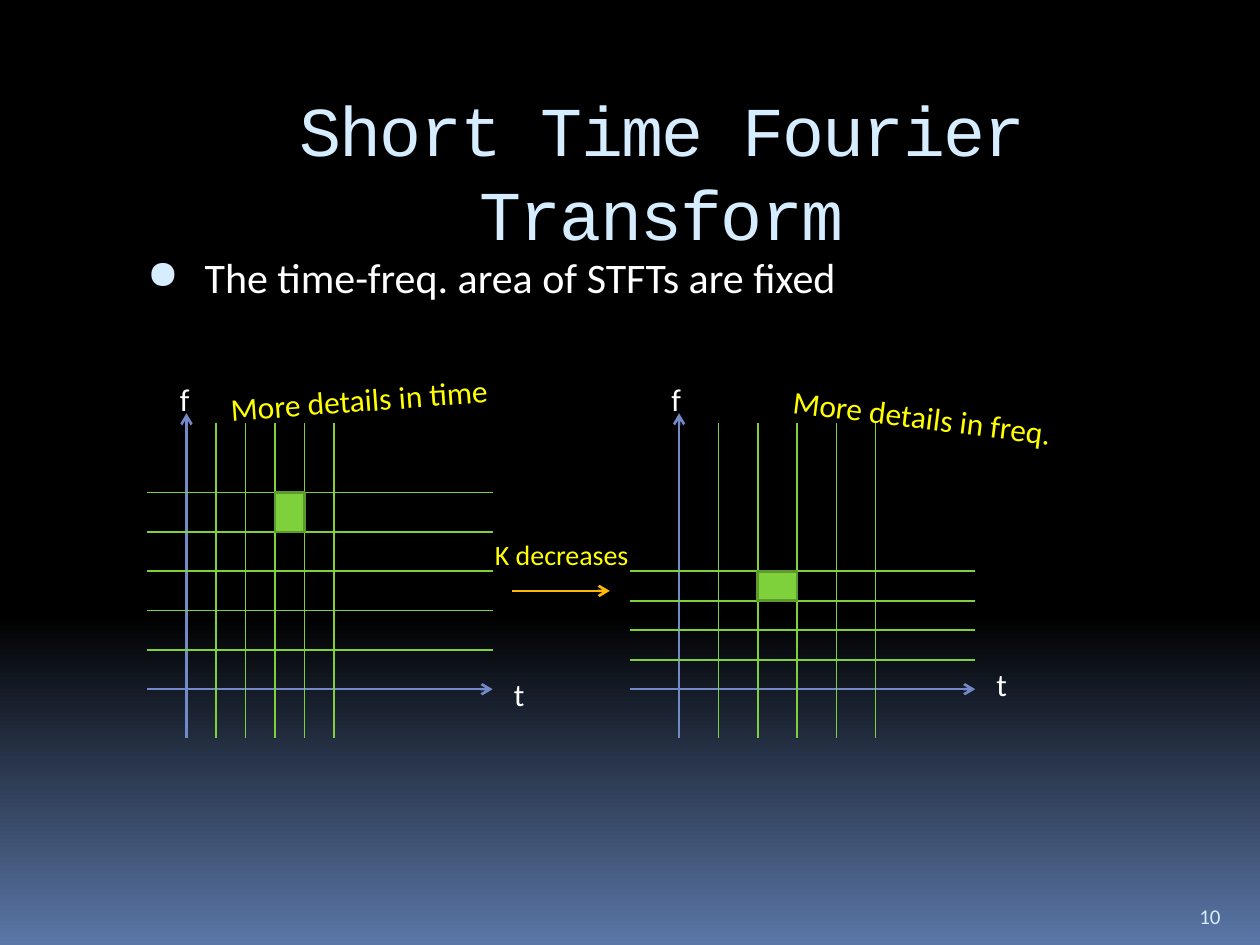
from lxml import etree
from pptx import Presentation
from pptx import util as u
from pptx.dml.color import RGBColor
from pptx.enum import shapes, text
from pptx.oxml import ns

PALE, WHITE, YELLOW = "D6ECFF", "FFFFFF", "FFFF00"
AXIS, GRID, CELL_EDGE, ARROW = "738AC8", "7FD13B", "5E9B2C", "FEB80A"

TITLE = "Short Time Fourier Transform"
BULLET = " The time-freq. area of STFTs are fixed"
PAGE = "10"
LABELS = [
    ("K decreases", 3.83, 4.22, 1.31, 16, YELLOW, 0),
    ("t", 7.81, 5.23, 0.29, 18, WHITE, 0),
    ("t", 3.98, 5.31, 0.29, 18, WHITE, 0),
    ("f", 1.33, 2.97, 0.28, 18, WHITE, 0),
    ("f", 5.23, 2.97, 0.28, 18, WHITE, 0),
    ("More details in time", 1.73, 2.97, 2.27, 18, YELLOW, 355.8),
    ("More details in freq.", 6.19, 3.11, 2.28, 18, YELLOW, 7.1),
]

FINE, COARSE = 1.17 / 5, 1.56 / 5
PLOTS = [
    dict(left=1.17, x0=1.48, dt=FINE, df=COARSE, cols=5, rows=5, cell=(3, 5)),
    dict(left=5, x0=5.39, dt=COARSE, df=FINE, cols=5, rows=4, cell=(2, 4)),
]
AXIS_LENGTH, Y0, BOTTOM, GRID_TOP, AXIS_TOP = 2.74, 5.47, 5.86, 3.36, 3.28


def color(value):
    return RGBColor.from_string(value)


def add_line(s, x1, y1, x2, y2, line_color, width, arrow=False):
    line = s.shapes.add_connector(shapes.MSO_CONNECTOR.STRAIGHT,
                                  *map(u.Inches, (x1, y1, x2, y2)))
    line.line.color.rgb = color(line_color)
    line.line.width = u.Pt(width)
    if arrow:
        etree.SubElement(line.line._get_or_add_ln(), ns.qn("a:tailEnd"), type="arrow")
    etree.SubElement(line._element.spPr, ns.qn("a:effectLst"))


def add_text(s, words, at, size, text_color, font="Calibri", wrap=True):
    box = s.shapes.add_textbox(*map(u.Inches, at))
    tf = box.text_frame
    tf.word_wrap = wrap
    p = tf.paragraphs[0]
    r = p.add_run()
    r.text = words
    r.font.name = font
    r.font.size = u.Pt(size)
    r.font.color.rgb = color(text_color)
    return box, tf, p, r


def add_bullet(p):
    p.space_before = u.Pt(7)
    pPr = p._p.get_or_add_pPr()
    pPr.set("marL", str(u.Inches(0.45)))
    pPr.set("indent", str(u.Inches(-0.38)))
    bullet_color = etree.SubElement(pPr, ns.qn("a:buClr"))
    etree.SubElement(bullet_color, ns.qn("a:srgbClr"), val=PALE)
    etree.SubElement(pPr, ns.qn("a:buSzPct"), val="95000")
    etree.SubElement(pPr, ns.qn("a:buChar"), char="●")


def add_plot(s, left, x0, dt, df, cols, rows, cell):
    right = left + AXIS_LENGTH
    add_line(s, left, Y0, right, Y0, AXIS, 1.5, True)
    add_line(s, x0, BOTTOM, x0, AXIS_TOP, AXIS, 1.5, True)
    for col in range(1, cols + 1):
        x = x0 + col * dt
        add_line(s, x, GRID_TOP, x, BOTTOM, GRID, 0.94)
    for row in range(1, rows + 1):
        y = Y0 - row * df
        add_line(s, left, y, right, y, GRID, 0.94)
    col, row = cell
    area = s.shapes.add_shape(
        shapes.MSO_SHAPE.RECTANGLE,
        *map(u.Inches, (x0 + col * dt, Y0 - row * df, dt, df)))
    area.shadow.inherit = False
    area.fill.solid()
    area.fill.fore_color.rgb = color(GRID)
    area.line.color.rgb = color(CELL_EDGE)
    area.line.width = u.Pt(1.5)


def main():
    prs = Presentation()
    prs.slide_width, prs.slide_height = u.Inches(10), u.Inches(7.5)
    s = prs.slides.add_slide(prs.slide_layouts[6])

    fill = s.background.fill
    fill.gradient()
    fill.gradient_angle = 270
    for stop, (position, value) in zip(fill.gradient_stops,
                                       [(0.65, "000000"), (1, "5B77A8")]):
        stop.position = position
        stop.color.rgb = color(value)

    _, tf, _, _ = add_text(s, PAGE, (9.42, 7.02, 0.5, 0.4), 12, PALE)
    tf.vertical_anchor = text.MSO_ANCHOR.BOTTOM

    _, tf, p, r = add_text(s, TITLE, (1, 0.56, 8.5, 1), 40, PALE, "Courier New")
    tf.margin_left = tf.margin_right = u.Inches(0.2)
    tf.margin_top = u.Inches(0.13)
    p.alignment = text.PP_ALIGN.CENTER
    p.line_spacing = u.Pt(48)
    r.font._element.set("spc", "-100")

    _, _, p, _ = add_text(s, BULLET, (1, 1.95, 8.5, 5), 24, WHITE)
    add_bullet(p)

    for plot in PLOTS:
        add_plot(s, **plot)
    add_line(s, 4.06, 4.69, 4.84, 4.69, ARROW, 1.5, True)

    for words, x, y, width, size, text_color, rotation in LABELS:
        box, tf, _, _ = add_text(s, words, (x, y, width, 0.4), size, text_color, wrap=False)
        tf.auto_size = text.MSO_AUTO_SIZE.SHAPE_TO_FIT_TEXT
        box.rotation = rotation

    prs.save("out.pptx")


if __name__ == "__main__":
    main()
